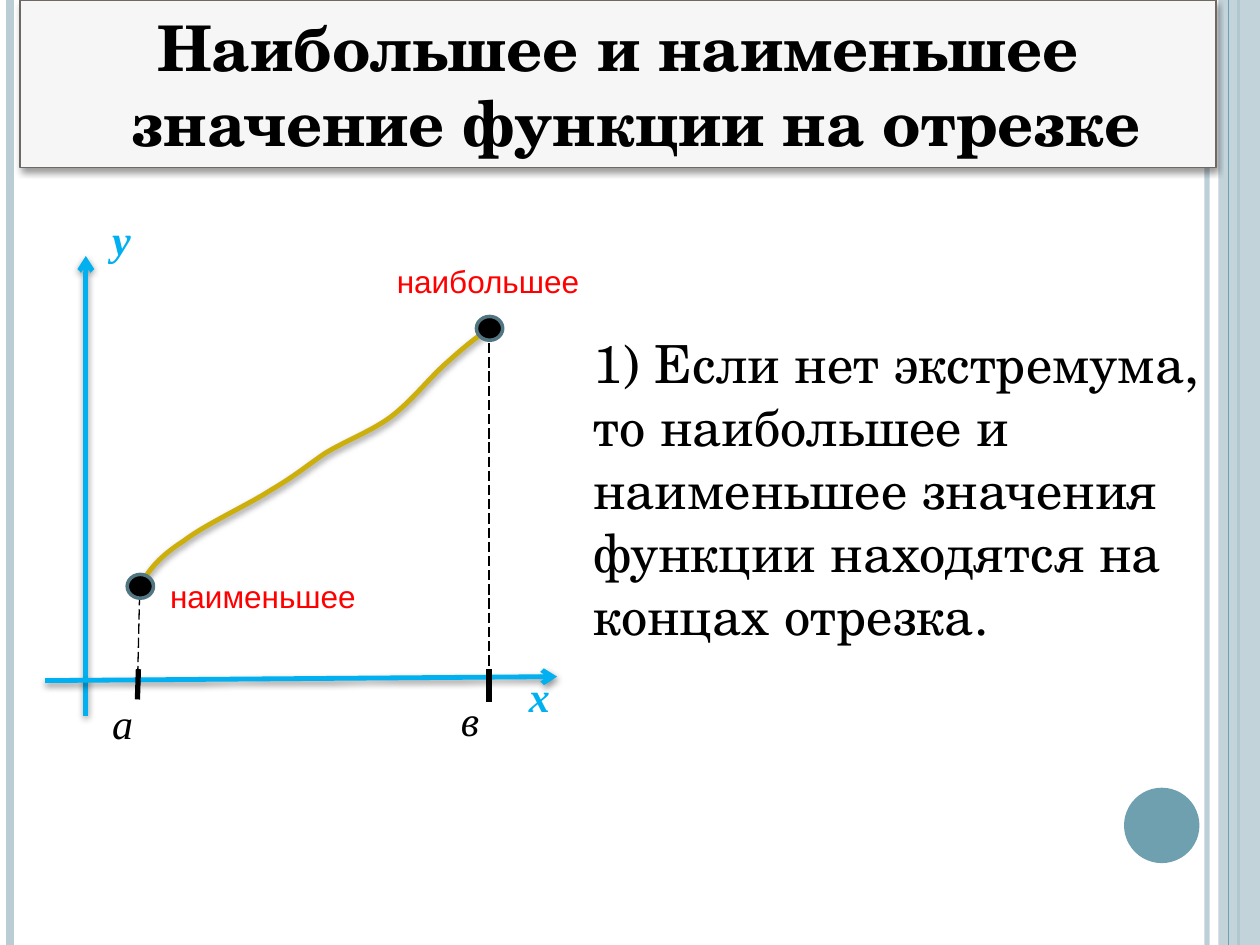
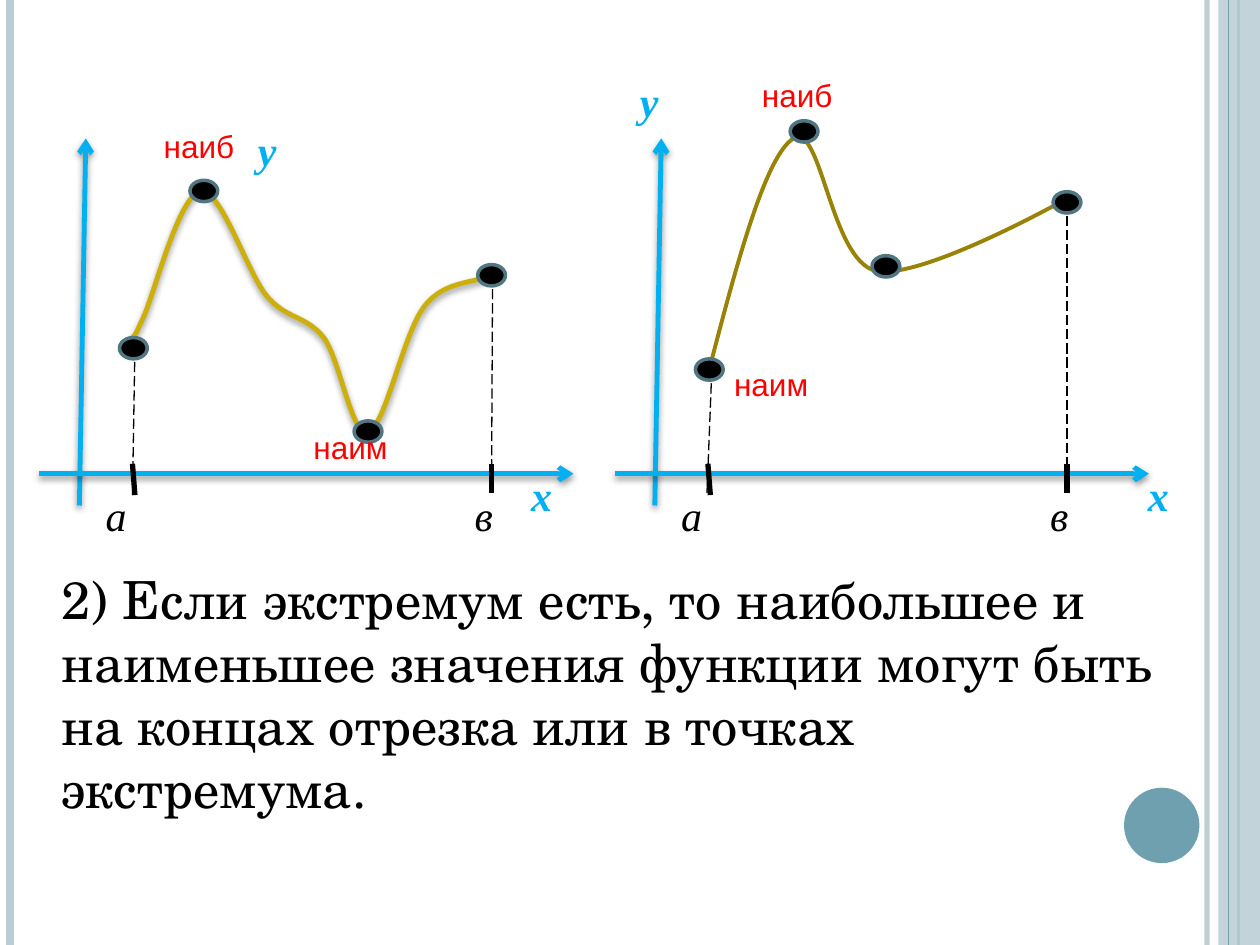
from dataclasses import dataclass
from typing import NamedTuple, Optional

from lxml.etree import SubElement
from pptx import Presentation
from pptx.dml.color import RGBColor
from pptx.enum.dml import MSO_LINE
from pptx.enum.shapes import MSO_CONNECTOR, MSO_SHAPE
from pptx.enum.text import MSO_ANCHOR, MSO_AUTO_SIZE, PP_ALIGN
from pptx.oxml.ns import qn
from pptx.util import Cm, Pt

WIDTH, HEIGHT = 25.4, 19.05
BLACK, SKY, RED = "000000", "00B0F0", "FF0000"
PALE, TEAL, GOLD = "BACDD4", "6EA0B0", "CCAF0A"

STYLES = {
    "title": dict(name="TeX Gyre Schola", size=Pt(36), bold=True, color=BLACK),
    "body": dict(name="TeX Gyre Schola", size=Pt(30), color=BLACK),
    "end": dict(name="Times New Roman", size=Pt(24), italic=True, color=BLACK),
    "axis": dict(name="Times New Roman", size=Pt(24), bold=True, italic=True, color=SKY),
    "label": dict(name="Arial", size=Pt(18), color=RED),
}


class Shade(NamedTuple):
    alpha: int
    dist: float


class Pen(NamedTuple):
    color: str
    width: float
    alpha: int = 100
    dash: Optional[MSO_LINE] = None
    arrow: bool = False
    shade: Optional[Shade] = None


SOFT = Shade(42, 1.6)
AXIS = Pen(SKY, 2.75, arrow=True, shade=SOFT)
TICK = Pen(BLACK, 3)
DASH = Pen(BLACK, 0.75, dash=MSO_LINE.LONG_DASH)
CURVE = Pen(GOLD, 2.75, shade=SOFT)
RIM = Pen("517682", 2)
EDGE = Pen("6E6964", 1)


class Line(NamedTuple):
    x1: float
    y1: float
    x2: float
    y2: float
    pen: Pen


class Note(NamedTuple):
    x: float
    y: float
    w: float
    h: float
    text: str
    style: str


class Box(NamedTuple):
    x: float
    y: float
    w: float
    h: float
    fill: str
    kind: MSO_SHAPE = MSO_SHAPE.RECTANGLE
    pen: Optional[Pen] = None
    alpha: int = 100
    shade: Optional[Shade] = None


@dataclass
class Graph:
    lines: list[Line]
    notes: list[Note]
    curve: list[tuple[float, float]]
    dots: list[tuple[float, float]]
    dot: tuple[float, float]
    pen: Pen = CURVE


RAILS = [
    Line(x, 0, x, HEIGHT, pen)
    for x, pen in [
        (24.33, Pen(PALE, 3, alpha=93)),
        (0.2, Pen(PALE, 4.5)),
        (24.97, Pen(TEAL, 1.5)),
    ]
]
BAND = Box(24.56, 0, 0.84, HEIGHT, PALE, alpha=87)
SEAM = Line(24.77, 0, 24.77, HEIGHT, Pen(TEAL, 0.75))
DISC = Box(22.66, 15.88, 1.52, 1.52, TEAL, MSO_SHAPE.OVAL)
BANNER = Box(0.41, 0, 24.1, 3.38, "F6F6F6", pen=EDGE, shade=Shade(40, 2))


def rgb(code: str) -> RGBColor:
    return RGBColor.from_string(code)


def fade(fill, code: str, alpha: int) -> None:
    """Make a solid fill, see-through when alpha is under 100 percent."""
    fill.solid()
    fill.fore_color.rgb = rgb(code)
    if alpha < 100:
        tint = fill._xPr.find(".//" + qn("a:srgbClr"))
        SubElement(tint, qn("a:alpha"), val=str(alpha * 1000))


def cast(shape, shade: Optional[Shade]) -> None:
    """Replace the theme shadow; call it after fill and line are set."""
    effect = SubElement(shape._element.spPr, qn("a:effectLst"))
    if shade:
        drop = SubElement(effect, qn("a:outerShdw"), blurRad=str(Pt(4)),
                          dist=str(Pt(shade.dist)), dir="5400000", rotWithShape="0")
        tint = SubElement(drop, qn("a:srgbClr"), val=BLACK)
        SubElement(tint, qn("a:alpha"), val=str(shade.alpha * 1000))


def ink(line, pen: Pen) -> None:
    line.width = Pt(pen.width)
    fade(line.fill, pen.color, pen.alpha)
    if pen.dash:
        line.dash_style = pen.dash
    if pen.arrow:
        SubElement(line._get_or_add_ln(), qn("a:tailEnd"), type="arrow")


def rule(shapes, item: Line) -> None:
    ends = [Cm(v) for v in item[:4]]
    link = shapes.add_connector(MSO_CONNECTOR.STRAIGHT, *ends)
    ink(link.line, item.pen)
    cast(link, item.pen.shade)


def block(shapes, item: Box):
    shape = shapes.add_shape(item.kind, *[Cm(v) for v in item[:4]])
    fade(shape.fill, item.fill, item.alpha)
    if item.pen:
        ink(shape.line, item.pen)
    else:
        shape.line.fill.background()
    cast(shape, item.shade)
    return shape


def write(frame, text: str, style: str):
    para = frame.paragraphs[0]
    run = para.add_run()
    run.text = text
    for key, value in STYLES[style].items():
        if key == "color":
            run.font.color.rgb = rgb(value)
        else:
            setattr(run.font, key, value)
    return para


def note(shapes, item: Note) -> None:
    frame = shapes.add_textbox(*[Cm(v) for v in item[:4]]).text_frame
    frame.word_wrap = item.style != "label"
    frame.auto_size = MSO_AUTO_SIZE.SHAPE_TO_FIT_TEXT
    write(frame, item.text, item.style)


def bend(shapes, points: list[tuple[float, float]], pen: Pen) -> None:
    """Draw a Bézier path: a start, then two handles and an end per arc."""
    spots = [(Cm(x), Cm(y)) for x, y in points]
    build = shapes.build_freeform(*spots[0])
    build.add_line_segments(spots[1:], close=False)
    shape = build.convert_to_shape()
    track = shape._element.find(".//" + qn("a:path"))
    steps = track.findall(qn("a:lnTo"))
    for start in range(0, len(steps), 3):
        arc = SubElement(track, qn("a:cubicBezTo"))
        for step in steps[start:start + 3]:
            arc.append(step[0])
            track.remove(step)
    shape.fill.background()
    ink(shape.line, pen)
    cast(shape, pen.shade)


def plot(slide, graph: Graph) -> None:
    shapes = slide.shapes.add_group_shape().shapes
    for line in graph.lines:
        rule(shapes, line)
    bend(shapes, graph.curve, graph.pen)
    w, h = graph.dot
    for x, y in graph.dots:
        block(shapes, Box(x - w / 2, y - h / 2, w, h, BLACK, MSO_SHAPE.OVAL, RIM))
    for item in graph.notes:
        note(shapes, item)


def trim(slide) -> None:
    """Draw the side rails, band and disc found on every slide."""
    for rail in RAILS:
        rule(slide.shapes, rail)
    block(slide.shapes, BAND)
    rule(slide.shapes, SEAM)
    block(slide.shapes, DISC)


def head(slide, text: str) -> None:
    frame = block(slide.shapes, BANNER).text_frame
    frame.word_wrap = True
    frame.vertical_anchor = MSO_ANCHOR.MIDDLE
    para = write(frame, text, "title")
    para.alignment = PP_ALIGN.CENTER
    para.space_before = Pt(5.8)
    props = para._p.get_or_add_pPr()
    props.set("marL", str(Cm(0.76)))
    props.set("indent", str(Cm(-0.76)))


def axes(dx: float) -> list[Line]:
    """Give the axes and end ticks of a small graph moved right by dx."""
    base = [
        Line(1.6, 10.19, 1.73, 2.79, AXIS),
        Line(0.79, 9.55, 11.56, 9.55, AXIS),
        Line(9.91, 9.35, 9.91, 9.93, TICK),
        Line(2.67, 9.35, 2.72, 9.98, TICK),
    ]
    return [line._replace(x1=line.x1 + dx, x2=line.x2 + dx) for line in base]


def ends(dx: float) -> list[Note]:
    return [Note(1.88 + dx, 9.75, 1.93, 1.35, "а", "end"),
            Note(9.32 + dx, 9.75, 1.68, 1.35, "в", "end")]


SHIFT = 11.6
RISE = Graph(
    lines=[
        Line(1.73, 14.43, 1.73, 5.16, AXIS),
        Line(0.91, 13.72, 11.23, 13.64, AXIS),
        Line(9.86, 13.49, 9.86, 14.15, TICK),
        Line(2.79, 13.49, 2.77, 14.1, TICK),
        Line(2.82, 11.71, 2.77, 13.89, DASH),
        Line(9.86, 6.63, 9.86, 13.72, DASH),
    ],
    notes=[
        Note(2.01, 13.94, 1.9, 1.52, "а", "end"),
        Note(9.04, 13.87, 1.65, 1.52, "в", "end"),
        Note(10.41, 13.39, 1.09, 1.52, "х", "axis"),
        Note(2.01, 4.17, 1.09, 1.52, "у", "axis"),
        Note(7.75, 5.16, 4.22, 1.02, "наибольшее", "label"),
        Note(3.18, 11.51, 4.29, 1.02, "наименьшее", "label"),
    ],
    curve=[
        (2.82, 11.84),
        (3, 11.46), (3.25, 11.2), (3.71, 10.9),
        (4.14, 10.57), (4.98, 10.19), (5.46, 9.88),
        (5.94, 9.6), (6.17, 9.4), (6.55, 9.14),
        (6.96, 8.89), (7.49, 8.69), (7.87, 8.41),
        (8.28, 8.1), (8.59, 7.7), (8.92, 7.39),
        (9.25, 7.09), (9.55, 6.83), (9.86, 6.63),
    ],
    dots=[(2.83, 11.82), (9.87, 6.62)],
    dot=(0.53, 0.48),
)
WAVE = Graph(
    lines=axes(0) + [Line(2.72, 7.01, 2.67, 9.98, DASH),
                     Line(9.93, 5.54, 9.91, 9.55, DASH)],
    notes=ends(0) + [
        Note(10.46, 9.35, 1.12, 1.35, "х", "axis"),
        Note(4.95, 2.39, 1.12, 1.35, "у", "axis"),
        Note(3.05, 2.44, 2.69, 1.09, "наиб", "label"),
        Note(6.07, 8.51, 2.79, 1.09, "наим", "label"),
    ],
    curve=[
        (2.44, 7.01),
        (2.46, 7.01), (2.59, 6.91), (2.67, 6.81),
        (2.74, 6.71), (2.67, 6.88), (2.9, 6.38),
        (3.12, 5.89), (3.61, 3.94), (4.04, 3.86),
        (4.45, 3.78), (4.98, 5.49), (5.38, 5.97),
        (5.79, 6.45), (6.17, 6.35), (6.53, 6.81),
        (6.86, 7.26), (7.09, 8.81), (7.42, 8.71),
        (7.77, 8.61), (8.13, 6.71), (8.56, 6.17),
        (8.97, 5.64), (9.58, 5.72), (9.91, 5.54),
    ],
    dots=[(2.69, 7.02), (9.91, 5.55), (4.11, 3.85), (7.42, 8.7)],
    dot=(0.56, 0.43),
)
PEAK = Graph(
    lines=axes(SHIFT) + [Line(14.35, 7.44, 14.25, 9.98, DASH),
                         Line(21.51, 4.06, 21.51, 9.55, DASH)],
    notes=ends(SHIFT) + [
        Note(22.89, 9.35, 1.12, 1.35, "х", "axis"),
        Note(12.65, 1.4, 1.12, 1.35, "у", "axis"),
        Note(15.11, 1.4, 2.69, 1.09, "наиб", "label"),
        Note(14.55, 7.24, 2.79, 1.09, "наим", "label"),
    ],
    curve=[
        (14.3, 7.44),
        (14.86, 5.28), (15.44, 3.12), (16, 2.79),
        (16.56, 2.46), (16.74, 5.23), (17.65, 5.46),
        (18.54, 5.66), (21.41, 4.06), (21.41, 4.06),
    ],
    dots=[(16.21, 2.65), (17.86, 5.37), (21.51, 4.08), (14.3, 7.45)],
    dot=(0.56, 0.43),
    pen=Pen("998307", 2.25),
)
FIRST = Note(11.71, 6.55, 12.9, 6.68, "1) Если нет экстремума, то наибольшее и наименьшее "
             "значения функции находятся на концах отрезка.", "body")
SECOND = Note(0.99, 11.3, 22.81, 5.38, "2) Если экстремум есть, то наибольшее и наименьшее значения "
              "функции могут быть на концах отрезка или в точках экстремума.", "body")


def main() -> None:
    deck = Presentation()
    deck.slide_width, deck.slide_height = Cm(WIDTH), Cm(HEIGHT)
    pages = [
        ("Наибольшее и наименьшее значение функции на отрезке", [RISE], FIRST),
        (None, [WAVE, PEAK], SECOND),
    ]
    for title, graphs, body in pages:
        slide = deck.slides.add_slide(deck.slide_layouts[6])
        trim(slide)
        if title:
            head(slide, title)
        for graph in graphs:
            plot(slide, graph)
        note(slide.shapes, body)
    deck.save("out.pptx")


if __name__ == "__main__":
    main()
